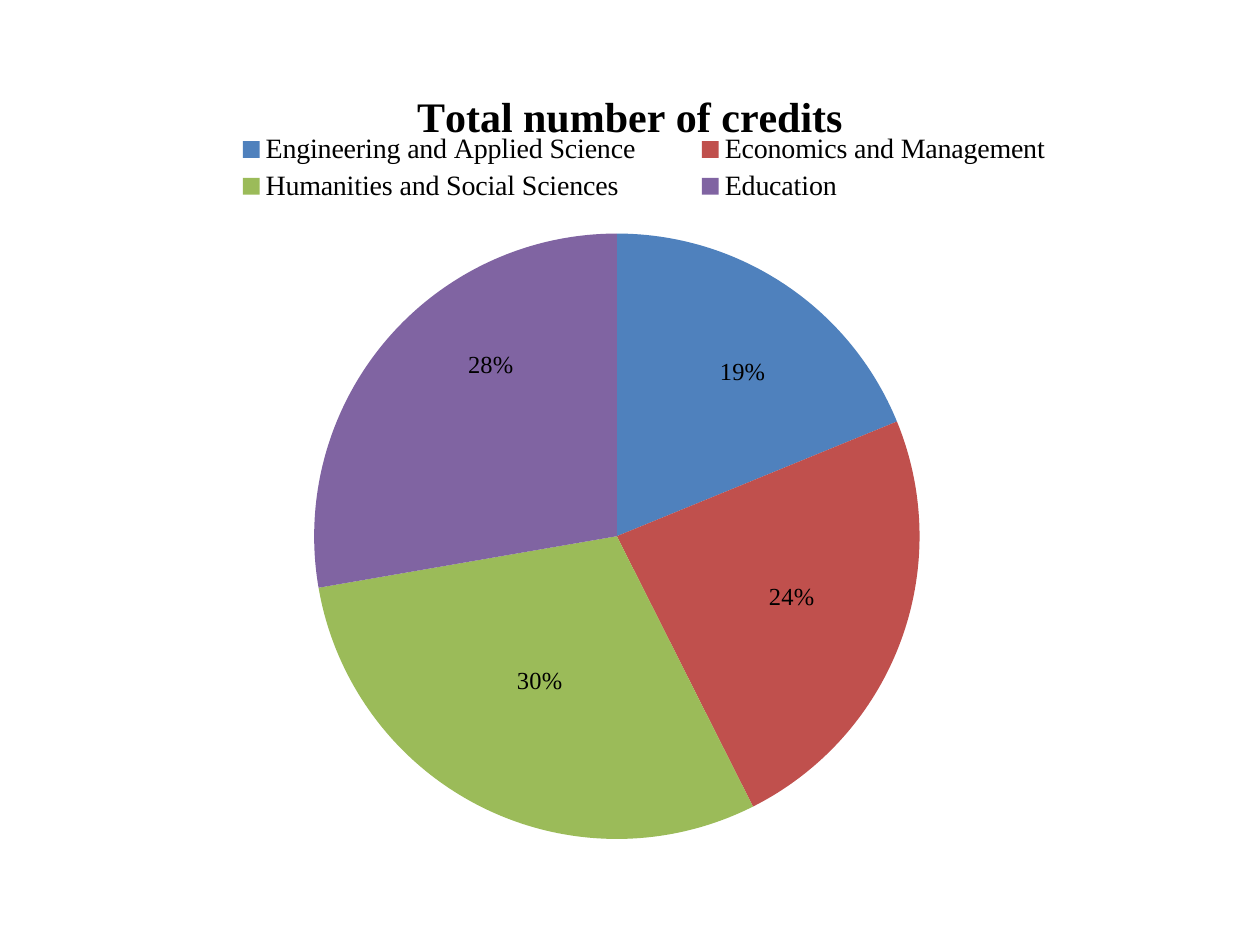
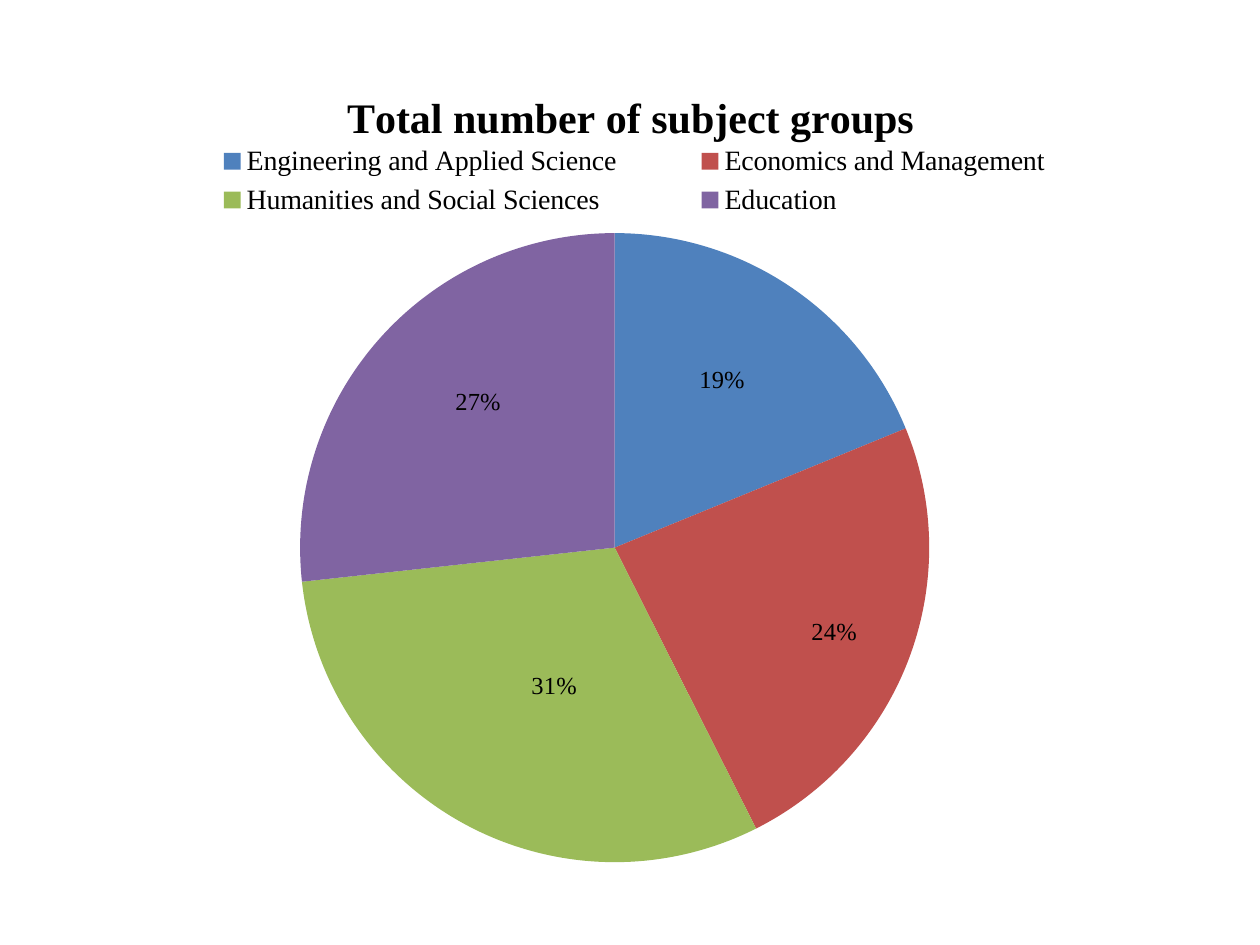
"""Build two slides, each a pie chart of credits or subject groups by faculty."""
from math import cos, pi, sin

from pptx import Presentation
from pptx.chart.data import CategoryChartData as Data
from pptx.dml.color import RGBColor
from pptx.enum.chart import XL_CHART_TYPE as Kind, XL_LABEL_POSITION as Spot
from pptx.enum.chart import XL_LEGEND_POSITION as Side
from pptx.oxml import parse_xml
from pptx.oxml.ns import nsdecls, qn
from pptx.util import Pt

SERIF = "Times New Roman"
BLACK = "000000"
WIDTH = 648
PARTS = {
    "Engineering and Applied Science": "4F81BD",
    "Economics and Management": "C0504D",
    "Humanities and Social Sciences": "9BBB59",
    "Education": "8064A2",
}
PIES = [
    dict(name="Total number of credits", vals=[19, 24, 30, 28], high=466.5,
         title=(198, 13), key=(70, 39.5, 524, 45), pie=(143.5, 99.5, 346),
         marks=[(72, -94), (100, 35), (-44, 83), (-72, -98)]),
    dict(name="Total number of subject groups", vals=[19, 24, 31, 27], high=478,
         title=(158, 13.5), key=(48.5, 45, 556, 48.5), pie=(135.5, 99.25, 359.5),
         marks=[(61.5, -96), (125.5, 48), (-34.5, 79), (-78, -83)]),
]


def style(font, size, face=SERIF, bold=False):
    font.size, font.name, font.bold = Pt(size), face, bold
    font.color.rgb = RGBColor.from_string(BLACK)


def place(node, slot, high, box, modes=()):
    for old in node.findall(qn("c:layout")):
        node.remove(old)
    tags = [f'<c:{mode} val="{val}"/>' for mode, val in modes]
    for tag, val, full in zip("xywh", box, (WIDTH, high) * 2):
        tags.append(f'<c:{tag} val="{val / full:.4f}"/>')
    node.insert(slot, parse_xml(
        f'<c:layout {nsdecls("c")}><c:manualLayout>{"".join(tags)}'
        '</c:manualLayout></c:layout>'))


edge = [("xMode", "edge"), ("yMode", "edge")]
inner = [("layoutTarget", "inner")] + edge
deck = Presentation()
deck.slide_width, deck.slide_height = Pt(720), Pt(540)

for item in PIES:
    high = item["high"]
    slide = deck.slides.add_slide(deck.slide_layouts[6])
    data = Data()
    data.categories = list(PARTS)
    data.add_series(item["name"], item["vals"])
    chart = slide.shapes.add_chart(
        Kind.PIE, Pt(36), Pt(34), Pt(WIDTH), Pt(high), data).chart
    style(chart.font, 10, "Calibri")

    chart.has_title = True
    run = chart.chart_title.text_frame.paragraphs[0].add_run()
    run.text = item["name"]
    style(run.font, 24, bold=True)

    chart.has_legend = True
    chart.legend.position = Side.TOP
    chart.legend.include_in_layout = False
    style(chart.legend.font, 16)

    plot = chart.plots[0]
    plot.vary_by_categories = True
    plot.has_data_labels = True
    plot.data_labels.show_percentage = True
    plot.data_labels.show_value = False
    style(plot.data_labels.font, 14)
    for num, tint in enumerate(PARTS.values()):
        point = plot.series[0].points[num]
        point.format.fill.solid()
        point.format.fill.fore_color.rgb = RGBColor.from_string(tint)
        style(point.data_label.font, 14)
        point.data_label.position = Spot.CENTER

    root = chart.element
    left, top, size = item["pie"]
    place(root.find(".//" + qn("c:title")), 1, high, item["title"], edge)
    place(root.find(".//" + qn("c:legend")), 1, high, item["key"], edge)
    place(root.find(".//" + qn("c:plotArea")), 0, high, (left, top, size, size), inner)

    total, done = sum(item["vals"]), 0
    labels = root.findall(".//" + qn("c:dLbl"))
    for label, val, (across, down) in zip(labels, item["vals"], item["marks"]):
        label.find(qn("c:showVal")).set("val", "0")
        label.find(qn("c:showPercent")).set("val", "1")
        turn = 2 * pi * (done + val / 2) / total
        done += val
        shift = across - size / 4 * sin(turn), down + size / 4 * cos(turn)
        place(label, 1, high, shift)

deck.save("out.pptx")
